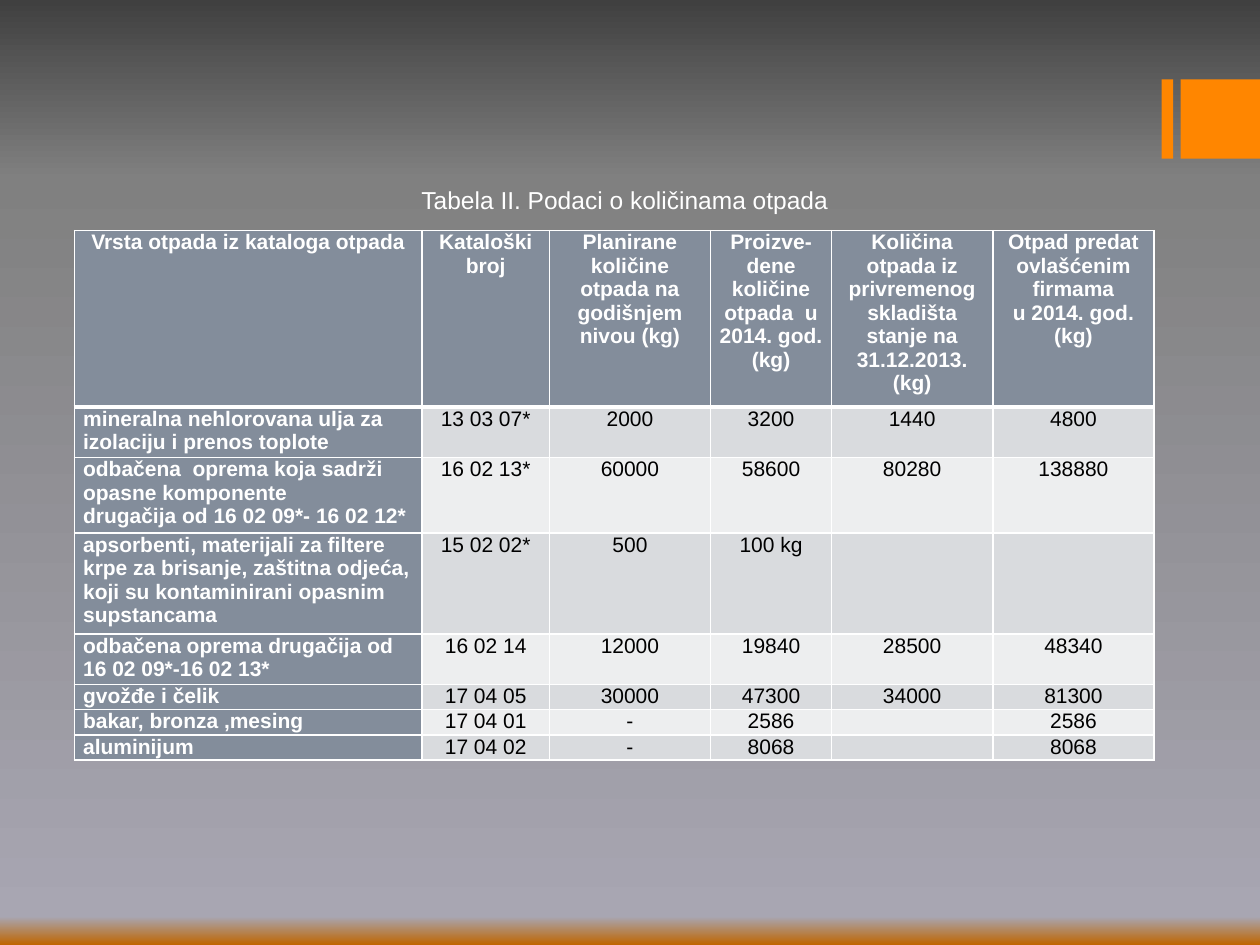
from typing import NamedTuple

from lxml.etree import SubElement
from pptx import Presentation
from pptx.dml.color import RGBColor
from pptx.enum.shapes import MSO_SHAPE as Shape
from pptx.enum.text import MSO_ANCHOR as Anchor, MSO_AUTO_SIZE as AutoSize, PP_ALIGN as Align
from pptx.oxml.ns import qn
from pptx.util import Emu, Inches, Pt

SLIDE_WIDTH, SLIDE_HEIGHT = Inches(10), Inches(7.5)
FONT = "Arial"
WHITE, BLACK, ORANGE, SLATE = "FFFFFF", "000000", "FF8600", "838D9B"
BANDS = ("D9DBDE", "EDEEEF")
BACKGROUND_STOPS = ((0, "404040"), (19, "808080"), (97, "A8A6B2"), (100, "BF6500"))
LINE_HEIGHT = Inches(0.2)


class Area(NamedTuple):
    left: float
    top: float
    width: float
    height: float


class TextStyle(NamedTuple):
    size: int
    color: str
    bold: bool
    align: Align


class WasteRow(NamedTuple):
    lines: int
    cells: tuple[str, ...]


ACCENT_BARS = (Area(92.2, 8.4, 0.9, 8.4), Area(93.7, 8.4, 6.3, 8.4))
CAPTION_AREA = Area(25.6, 18.93, 48, 4.53)
TABLE_AREA = Area(5.9, 24.4, 85.7, 56)
COLUMN_SHARES = (27.6, 10.1, 12.8, 9.6, 12.8, 12.8)

CAPTION = TextStyle(14, WHITE, False, Align.CENTER)
HEADER = TextStyle(12, WHITE, True, Align.CENTER)
WASTE_NAME = TextStyle(12, WHITE, True, Align.LEFT)
VALUE = TextStyle(12, BLACK, False, Align.CENTER)

ROWS = (
    WasteRow(7, ("Vrsta otpada iz kataloga otpada", "Kataloški broj",
                 "Planirane količine otpada na godišnjem nivou (kg)",
                 "Proizve-\ndene količine otpada  u 2014. god. (kg)",
                 "Količina otpada iz privremenog skladišta stanje na 31.12.2013. (kg)",
                 "Otpad predat ovlašćenim firmama\nu 2014. god.\n(kg)")),
    WasteRow(2, ("mineralna nehlorovana ulja za izolaciju i prenos toplote",
                 "13 03 07*", "2000", "3200", "1440", "4800")),
    WasteRow(3, ("odbačena  oprema koja sadrži opasne komponente\vdrugačija od 16 02 09*- 16 02 12*",
                 "16 02 13*", "60000", "58600", "80280", "138880")),
    WasteRow(4, ("apsorbenti, materijali za filtere krpe za brisanje, zaštitna odjeća, "
                 "koji su kontaminirani opasnim supstancama",
                 "15 02 02*", "500", "100 kg", "", "")),
    WasteRow(2, ("odbačena oprema drugačija od 16 02 09*-16 02 13*",
                 "16 02 14", "12000", "19840", "28500", "48340")),
    WasteRow(1, ("gvožđe i čelik", "17 04 05", "30000", "47300", "34000", "81300")),
    WasteRow(1, ("bakar, bronza ,mesing", "17 04 01", "-", "2586", "", "2586")),
    WasteRow(1, ("aluminijum", "17 04 02", "-", "8068", "", "8068")),
)


def color(value: str) -> RGBColor:
    return RGBColor.from_string(value)


def across(share: float) -> Emu:
    return Emu(round(SLIDE_WIDTH * share / 100))


def down(share: float) -> Emu:
    return Emu(round(SLIDE_HEIGHT * share / 100))


def place(area: Area) -> tuple[Emu, Emu, Emu, Emu]:
    return across(area.left), down(area.top), across(area.width), down(area.height)


def write_text(frame, text: str, style: TextStyle) -> None:
    for index, content in enumerate(text.split("\n")):
        paragraph = frame.add_paragraph() if index else frame.paragraphs[0]
        paragraph.alignment = style.align
        for part_index, part in enumerate(content.split("\v")):
            if part_index:
                paragraph.add_line_break()
            run = paragraph.add_run()
            run.text = part
            run.font.name = FONT
            run.font.size = Pt(style.size)
            run.font.bold = style.bold
            run.font.color.rgb = color(style.color)


def paint_background(slide) -> None:
    fill = slide.background.fill
    fill.gradient()
    fill.gradient_angle = 270
    stop_list = slide.element.xpath(".//p:bg//a:gsLst")[0]
    for old_stop in list(stop_list):
        stop_list.remove(old_stop)
    for position, value in BACKGROUND_STOPS:
        stop = SubElement(stop_list, qn("a:gs"), pos=str(position * 1000))
        SubElement(stop, qn("a:srgbClr"), val=value)


def draw_bar(slide, area: Area) -> None:
    bar = slide.shapes.add_shape(Shape.RECTANGLE, *place(area))
    bar.shadow.inherit = False
    bar.fill.solid()
    bar.fill.fore_color.rgb = color(ORANGE)
    bar.line.fill.background()


def draw_caption(slide, text: str) -> None:
    title = slide.shapes.title
    title.left, title.top, title.width, title.height = place(CAPTION_AREA)
    frame = title.text_frame
    frame.word_wrap = True
    frame.auto_size = AutoSize.SHAPE_TO_FIT_TEXT
    frame.vertical_anchor = Anchor.TOP
    write_text(frame, text, CAPTION)


def draw_borders(cell, top: int, bottom: int) -> None:
    properties = cell._tc.get_or_add_tcPr()
    for side, width in (("L", 1), ("R", 1), ("T", top), ("B", bottom)):
        line = SubElement(properties, qn(f"a:ln{side}"), w=str(Pt(width)))
        SubElement(SubElement(line, qn("a:solidFill")), qn("a:srgbClr"), val=WHITE)


def draw_cell(cell, text: str, row: int, column: int) -> None:
    cell.margin_left = cell.margin_right = Inches(0.07)
    cell.margin_top = cell.margin_bottom = 0
    draw_borders(cell, 3 if row == 1 else 1, 3 if row == 0 else 1)
    heading = row == 0 or column == 0
    cell.fill.solid()
    cell.fill.fore_color.rgb = color(SLATE if heading else BANDS[(row - 1) % 2])
    style = HEADER if row == 0 else WASTE_NAME if column == 0 else VALUE
    if text:
        write_text(cell.text_frame, text, style)
    else:
        paragraph = cell.text_frame.paragraphs[0]
        SubElement(paragraph._p, qn("a:endParaRPr"), sz=str(style.size * 100))


def draw_table(slide) -> None:
    frame = slide.shapes.add_table(len(ROWS), len(COLUMN_SHARES), *place(TABLE_AREA))
    table = frame.table
    table.first_col = True
    for column, share in zip(table.columns, COLUMN_SHARES):
        column.width = across(share)
    for row_index, row in enumerate(ROWS):
        table.rows[row_index].height = LINE_HEIGHT * row.lines
        for column_index, text in enumerate(row.cells):
            draw_cell(table.cell(row_index, column_index), text, row_index, column_index)


def main() -> None:
    presentation = Presentation()
    presentation.slide_width, presentation.slide_height = SLIDE_WIDTH, SLIDE_HEIGHT
    slide = presentation.slides.add_slide(presentation.slide_layouts.get_by_name("Title Only"))
    paint_background(slide)
    for area in ACCENT_BARS:
        draw_bar(slide, area)
    draw_table(slide)
    draw_caption(slide, "Tabela II. Podaci o količinama otpada")
    presentation.save("out.pptx")


if __name__ == "__main__":
    main()
